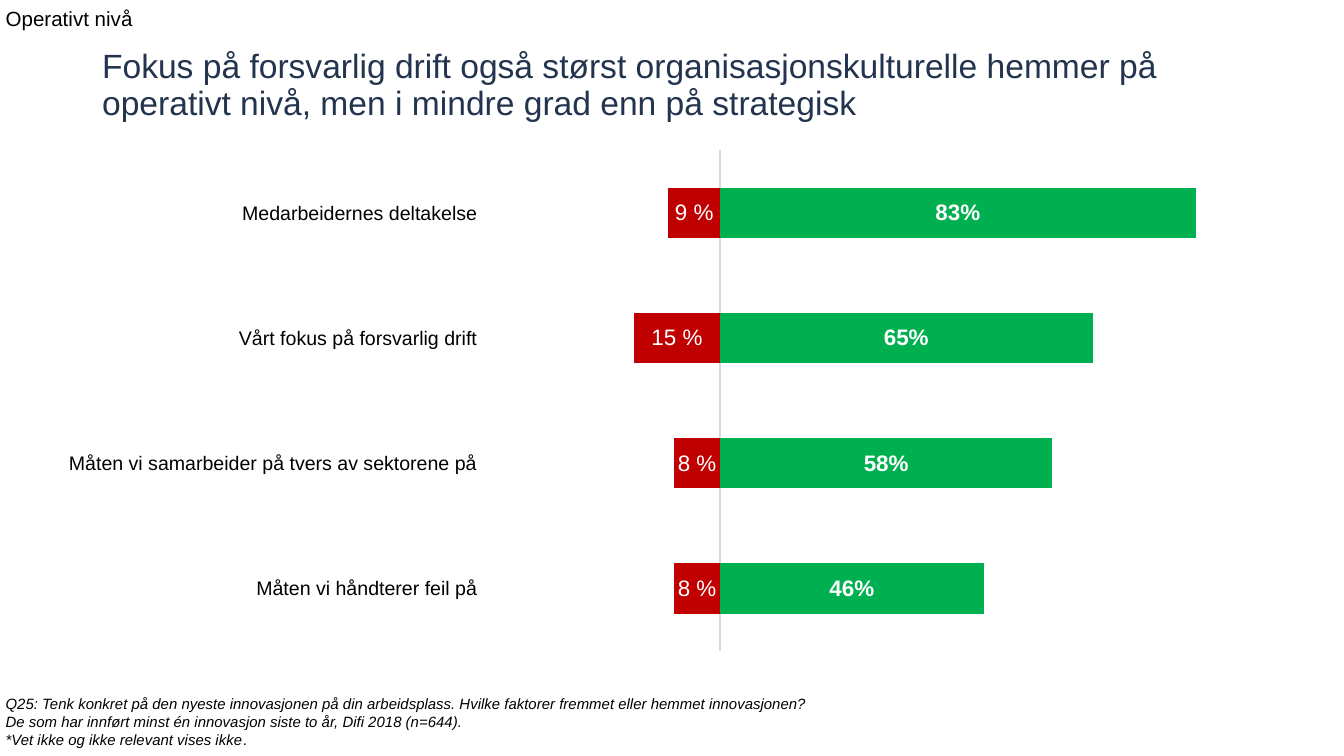
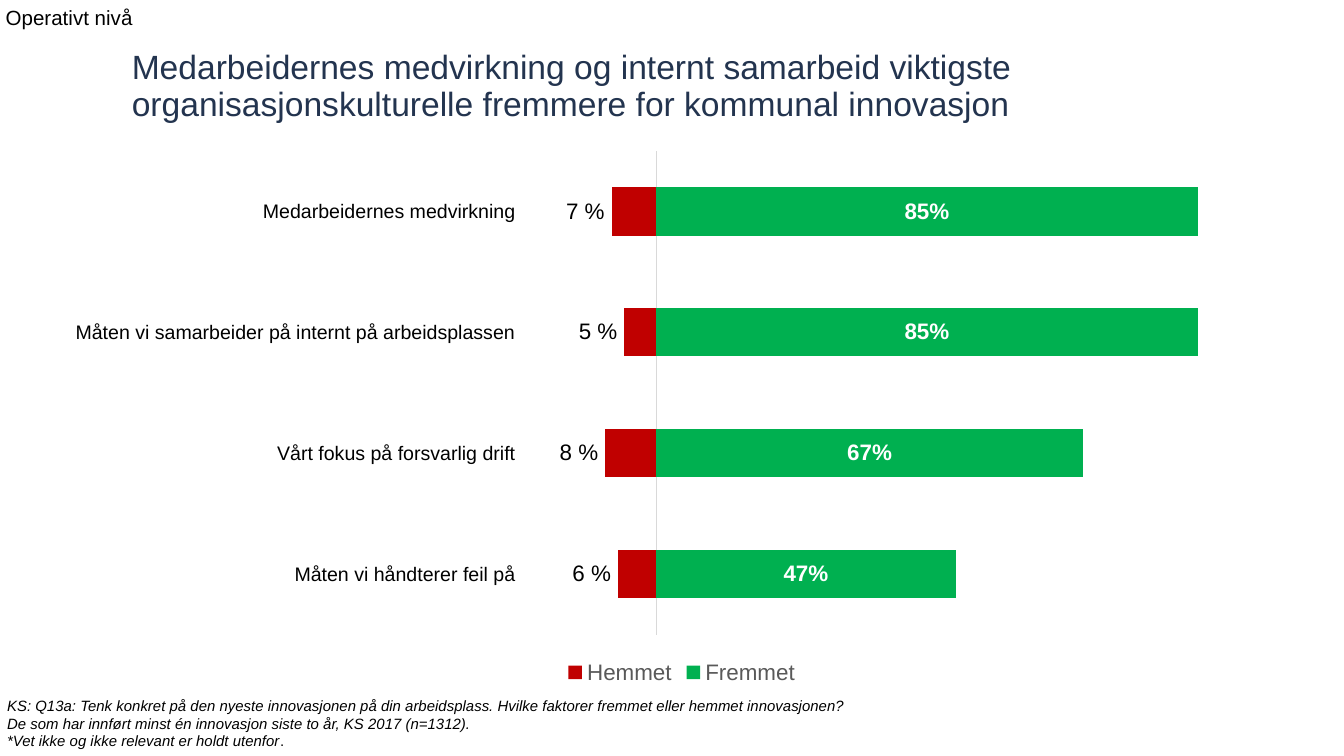
from pptx import Presentation
from pptx.chart.data import CategoryChartData as ChartData
from pptx.dml.color import RGBColor
from pptx.enum.chart import XL_CHART_TYPE as ChartType, XL_LABEL_POSITION as LabelPosition
from pptx.enum.chart import XL_LEGEND_POSITION as LegendPosition, XL_TICK_MARK as TickMark
from pptx.enum.chart import XL_TICK_LABEL_POSITION as TickLabels
from pptx.enum.text import MSO_ANCHOR as Anchor, MSO_AUTO_SIZE as AutoSize, PP_ALIGN as Align
from pptx.oxml import parse_xml
from pptx.oxml.ns import nsdecls, qn
from pptx.util import Pt

NAVY = RGBColor(0x23, 0x34, 0x4F)
BLACK = RGBColor(0x00, 0x00, 0x00)
WHITE = RGBColor(0xFF, 0xFF, 0xFF)
RED = RGBColor(0xC0, 0x00, 0x00)
GREEN = RGBColor(0x00, 0xB0, 0x50)
GRAY = RGBColor(0x59, 0x59, 0x59)
LIGHT_GRAY = RGBColor(0xD9, 0xD9, 0xD9)

FONT = "Arial"
TITLE_ONLY = 5
NO_MARGINS = dict.fromkeys(("margin_left", "margin_top", "margin_right", "margin_bottom"), 0)
BAR_FORMAT = {"gap_width": 150, "overlap": 100, "vary_by_categories": False}
CATEGORY_FORMAT = {"tick_label_position": TickLabels.LOW, "major_tick_mark": TickMark.NONE,
                   "minor_tick_mark": TickMark.NONE, "has_major_gridlines": False}
VALUE_FORMAT = {"maximum_scale": 1, "has_major_gridlines": False, "visible": False}
LABEL_FORMAT = {"show_value": True, "number_format": "0%", "number_format_is_linked": False}
LEGEND_FORMAT = {"position": LegendPosition.BOTTOM, "include_in_layout": False}


def apply(target, values):
    for name, value in values.items():
        setattr(target, name, value)


def set_font(font, size, color, **values):
    apply(font, {"name": FONT, "size": Pt(size), **values})
    font.color.rgb = color


def make_layout(**values):
    parts = "".join(f'<c:{name} val="{value}"/>' for name, value in values.items())
    return parse_xml(f'<c:layout {nsdecls("c")}><c:manualLayout>{parts}</c:manualLayout></c:layout>')


class SurveyDeck:
    def __init__(self):
        self.deck = Presentation()
        apply(self.deck, {"slide_width": Pt(720), "slide_height": Pt(405)})
        self.page = None

    def add_page(self):
        self.page = self.deck.slides.add_slide(self.deck.slide_layouts[TITLE_ONLY])

    def add_title(self, text, left, top, width, height):
        title = self.page.shapes.title
        apply(title, {"left": Pt(left), "top": Pt(top), "width": Pt(width), "height": Pt(height)})
        apply(title.text_frame, {**NO_MARGINS, "word_wrap": True, "auto_size": AutoSize.NONE,
                                 "vertical_anchor": Anchor.BOTTOM, "text": text})
        para = title.text_frame.paragraphs[0]
        apply(para, {"alignment": Align.LEFT, "line_spacing": 0.9})
        set_font(para.runs[0].font, 18, NAVY)

    def add_text(self, left, top, width, height, **values):
        box = self.page.shapes.add_textbox(Pt(left), Pt(top), Pt(width), Pt(height))
        apply(box.text_frame, {**NO_MARGINS, **values})
        return box.text_frame

    def add_level(self, top):
        frame = self.add_text(3, top, 530, 23, word_wrap=True, vertical_anchor=Anchor.BOTTOM)
        frame.text = "Operativt nivå"
        set_font(frame.paragraphs[0].runs[0].font, 11, BLACK)

    def add_source(self, lines, left, top, width):
        frame = self.add_text(left, top, width, 29, word_wrap=False,
                              auto_size=AutoSize.SHAPE_TO_FIT_TEXT)
        frame.text = "\n".join(lines)
        for para in frame.paragraphs:
            set_font(para.runs[0].font, 8, BLACK, italic=True)
        span = frame.paragraphs[-1].add_run()
        span.text = "."
        set_font(span.font, 8, BLACK, italic=False)

    def add_chart(self, categories, series, height, minimum, plot_area, label_shift=0, legend=False):
        data = ChartData(number_format="0%")
        data.categories = categories
        for name, values, *rest in series:
            data.add_series(name, values)
        chart = self.page.shapes.add_chart(ChartType.BAR_STACKED, Pt(24), Pt(75), Pt(682.5),
                                           Pt(height), data).chart
        set_font(chart.font, 10, BLACK)
        apply(chart, {"has_title": False, "has_legend": legend})
        if legend:
            apply(chart.legend, LEGEND_FORMAT)
            set_font(chart.legend.font, 12, GRAY)

        axis = chart.category_axis
        apply(axis, CATEGORY_FORMAT)
        set_font(axis.tick_labels.font, 10.5, BLACK)
        axis.format.line.width = Pt(0.75)
        axis.format.line.color.rgb = LIGHT_GRAY
        apply(chart.value_axis, {**VALUE_FORMAT, "minimum_scale": minimum})

        plot = chart.plots[0]
        apply(plot, BAR_FORMAT)
        for bars, (name, values, color, label_color, position) in zip(plot.series, series):
            bars.invert_if_negative = False
            bars.format.fill.solid()
            bars.format.fill.fore_color.rgb = color
            apply(bars.data_labels, {**LABEL_FORMAT, "position": position})
            set_font(bars.data_labels.font, 12, label_color, bold=True)
            for index, value in enumerate(values):
                if value < 0:
                    label = bars.points[index].data_label
                    label.text_frame.text = f"{-value * 100:.0f} %"
                    label.position = position
                    span = label.text_frame.paragraphs[0].runs[0]
                    set_font(span.font, 12, label_color, bold=False)

        if label_shift:
            for label in chart.element.iter(qn("c:dLbl")):
                label.insert(1, make_layout(x=label_shift, y=0))
        area = chart.element.find(".//" + qn("c:plotArea"))
        for layout in area.findall(qn("c:layout")):
            area.remove(layout)
        left, top, width, depth = plot_area
        area.insert(0, make_layout(layoutTarget="inner", xMode="edge", yMode="edge",
                                   x=left, y=top, w=width, h=depth))


def main():
    survey = SurveyDeck()

    survey.add_page()
    survey.add_title("Fokus på forsvarlig drift også størst organisasjonskulturelle hemmer på "
                     "operativt nivå, men i mindre grad enn på strategisk", 54.7, 41.8, 635.8, 23.8)
    survey.add_source(["Q25: Tenk konkret på den nyeste innovasjonen på din arbeidsplass. "
                       "Hvilke faktorer fremmet eller hemmet innovasjonen?",
                       "De som har innført minst én innovasjon siste to år, Difi 2018 (n=644).",
                       "*Vet ikke og ikke relevant vises ikke"], 3, 372.2, 435.6)
    survey.add_level(-6.5)
    survey.add_chart(
        ["Måten vi håndterer feil på", "Måten vi samarbeider på tvers av sektorene på",
         "Vårt fokus på forsvarlig drift", "Medarbeidernes deltakelse"],
        [("Series 1", (0.46, 0.58, 0.65, 0.83), GREEN, WHITE, LabelPosition.CENTER),
         ("Series 2", (-0.08, -0.08, -0.15, -0.09), RED, WHITE, LabelPosition.CENTER)],
        height=279.5, minimum=-0.4, plot_area=(0.35, 0.02, 0.63, 0.96))

    survey.add_page()
    survey.add_title("Medarbeidernes medvirkning og internt samarbeid viktigste "
                     "organisasjonskulturelle fremmere for kommunal innovasjon", 70.6, 18, 629.3, 48.2)
    survey.add_source(["KS: Q13a: Tenk konkret på den nyeste innovasjonen på din arbeidsplass. "
                       "Hvilke faktorer fremmet eller hemmet innovasjonen?",
                       "De som har innført minst én innovasjon siste to år, KS 2017 (n=1312).",
                       "*Vet ikke og ikke relevant er holdt utenfor"], 3.8, 373, 455.8)
    survey.add_level(-7.2)
    survey.add_chart(
        ["Måten vi håndterer feil på", "Vårt fokus på forsvarlig drift",
         "Måten vi samarbeider på internt på arbeidsplassen", "Medarbeidernes medvirkning"],
        [("Hemmet", (-0.06, -0.08, -0.05, -0.07), RED, BLACK, LabelPosition.INSIDE_END),
         ("Fremmet", (0.47, 0.67, 0.85, 0.85), GREEN, WHITE, LabelPosition.CENTER)],
        height=294.5, minimum=-0.2, plot_area=(0.38, 0.02, 0.6, 0.88),
        label_shift=-0.04, legend=True)

    survey.deck.save("out.pptx")


if __name__ == "__main__":
    main()
